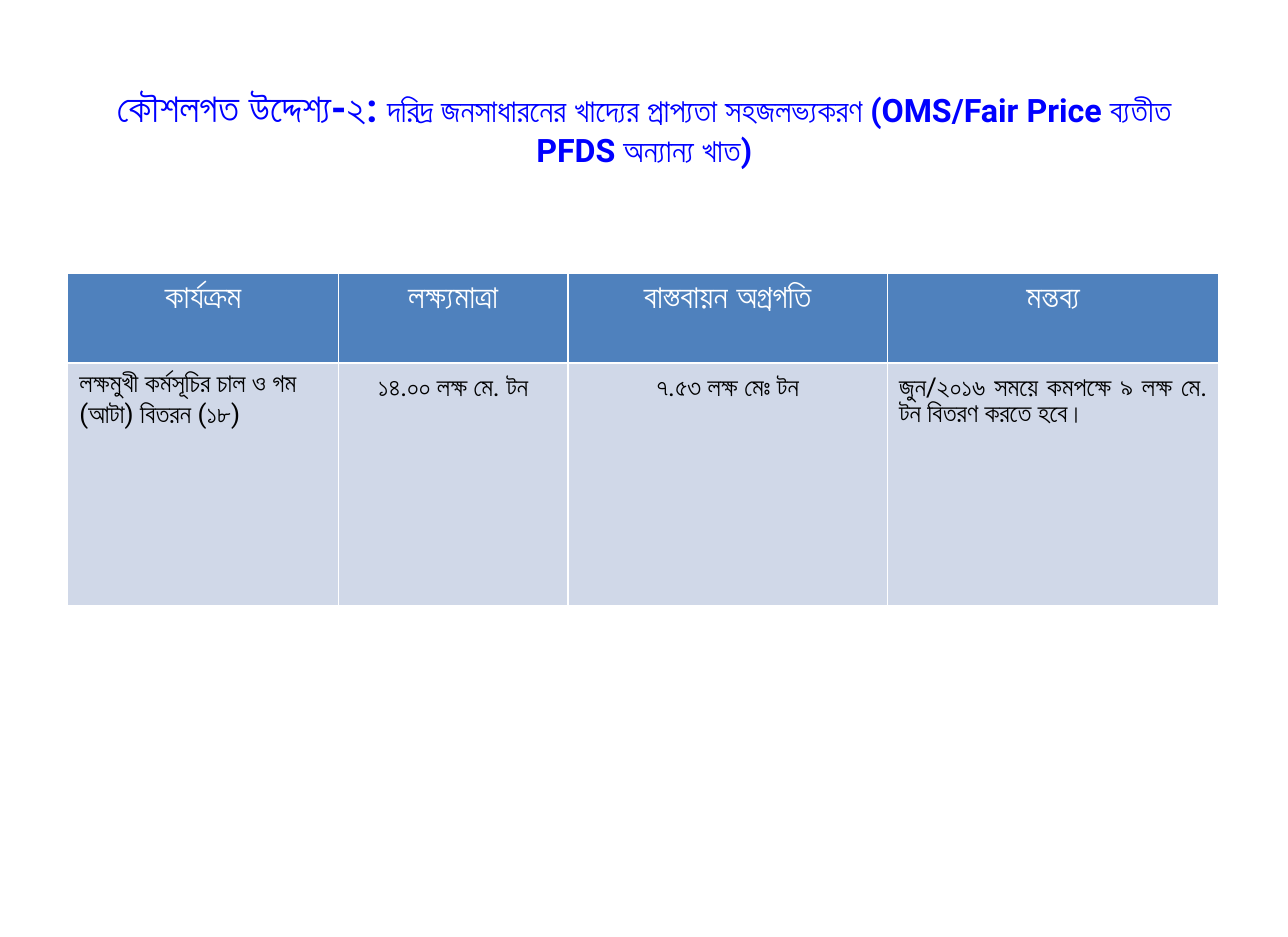
from pptx import Presentation
from pptx.dml.color import RGBColor as Color
from pptx.enum.text import MSO_ANCHOR as Anchor, PP_ALIGN as Align
from pptx.oxml.ns import qn
from pptx.util import Cm, Pt
from lxml.etree import SubElement

COLORS = {"title": "0000FF", "header": "4F81BD", "header_text": "FFFFFF",
          "body": "D0D8E8", "body_text": "000000"}


def add_run(paragraph, text, face, color, **formats):
    run = paragraph.add_run()
    run.text = text
    for name, value in formats.items():
        setattr(run.font, name, value)
    run.font.color.rgb = Color.from_string(COLORS[color])
    run.font.name = face
    SubElement(run.font._element, qn("a:cs"), typeface=face)


presentation = Presentation()
presentation.slide_width = Cm(27.94)
presentation.slide_height = Cm(20.32)
slide = presentation.slides.add_slide(presentation.slide_layouts[6])

title = slide.shapes.add_textbox(Cm(1.4), Cm(0.81), Cm(25.15), Cm(3.43))
frame = title.text_frame
frame_format = {"word_wrap": True, "vertical_anchor": Anchor.MIDDLE,
                "margin_left": Cm(0.28), "margin_right": Cm(0.28),
                "margin_top": Cm(0.56), "margin_bottom": Cm(0.13)}
for name, value in frame_format.items():
    setattr(frame, name, value)
heading = frame.paragraphs[0]
heading.alignment = Align.CENTER
for text, size in [
    ("কৌশলগত উদ্দেশ্য-২: ", 24.3),
    ("দরিদ্র জনসাধারনের খাদ্যের প্রাপ্যতা সহজলভ্যকরণ "
     "(OMS/Fair Price ব্যতীত PFDS অন্যান্য খাত)", 19.8),
]:
    add_run(heading, text, "Roboto", "title", size=Pt(size), bold=True)

columns = [
    (5.87, "কার্যক্রম", "লক্ষমুখী কর্মসূচির চাল ও গম (আটা) বিতরন (১৮)", Align.LEFT),
    (4.98, "লক্ষ্যমাত্রা", "১৪.০০ লক্ষ মে. টন", Align.CENTER),
    (6.93, "বাস্তবায়ন অগ্রগতি", "৭.৫৩ লক্ষ মেঃ টন", Align.CENTER),
    (7.19, "মন্তব্য", "জুন/২০১৬ সময়ে কমপক্ষে ৯ লক্ষ মে. টন বিতরণ করতে হবে।", Align.JUSTIFY),
]
table = slide.shapes.add_table(
    2, len(columns), Cm(1.47), Cm(5.92), Cm(24.97), Cm(7.21)).table
for row, height in zip(table.rows, (1.95, 5.26)):
    row.height = Cm(height)

for index, (width, header, body, alignment) in enumerate(columns):
    table.columns[index].width = Cm(width)
    for row, (text, align, style, face, size) in enumerate([
        (header, Align.CENTER, "header", "Arial", 20),
        (body, alignment, "body", "Roboto", 16),
    ]):
        cell = table.cell(row, index)
        cell.fill.solid()
        cell.fill.fore_color.rgb = Color.from_string(COLORS[style])
        paragraph = cell.text_frame.paragraphs[0]
        paragraph.alignment = align
        add_run(paragraph, text, face, style + "_text",
                size=Pt(size), bold=style == "header")
        if style == "body" and index > 0:
            cell.margin_top = Cm(0.3)
            paragraph.line_spacing = Pt(16)

presentation.save("out.pptx")
